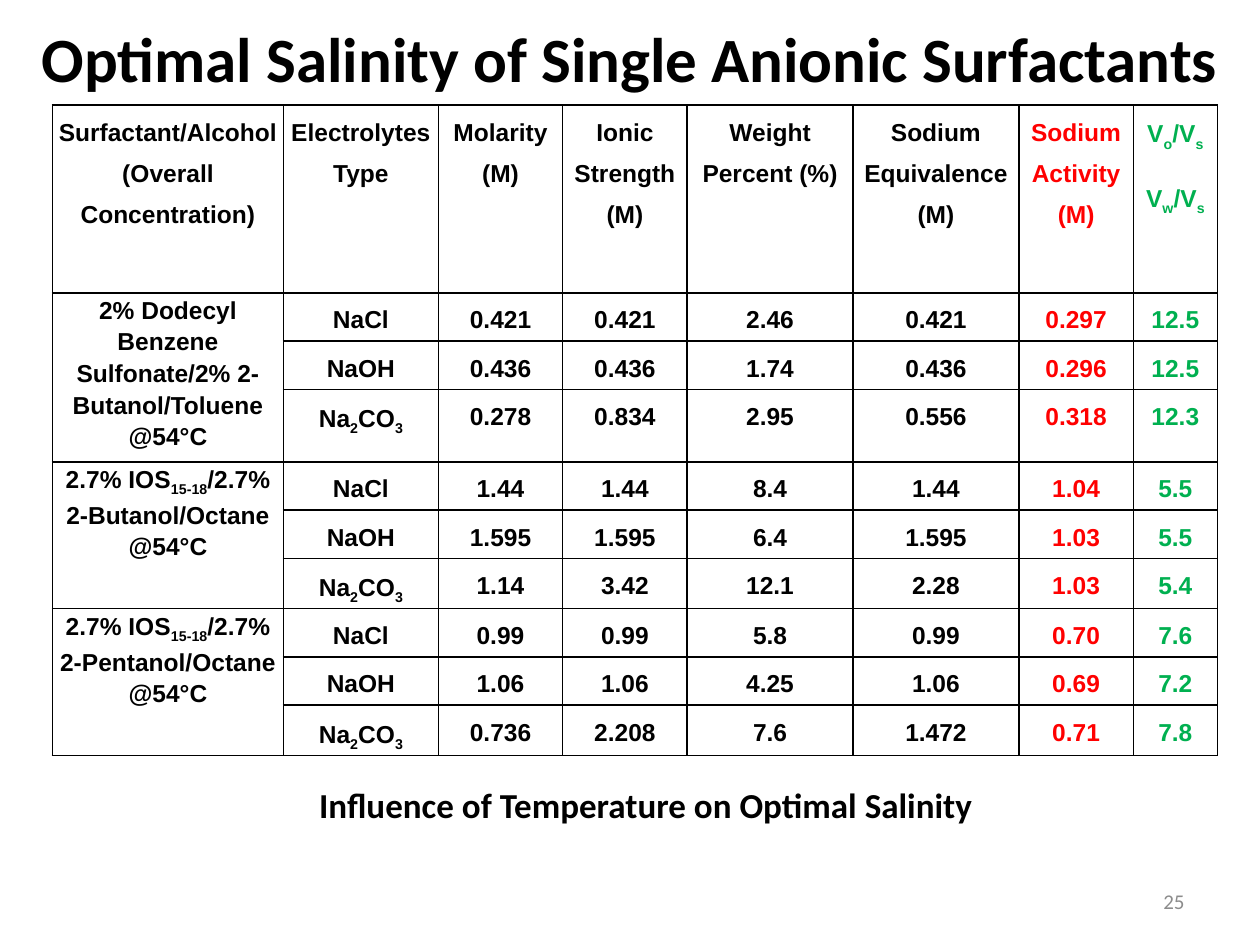
import dataclasses

import pptx
import pptx.dml.color
import pptx.enum.text
import pptx.oxml
import pptx.oxml.ns
import pptx.util

Inches, Pt = pptx.util.Inches, pptx.util.Pt
ALIGN, ANCHOR = pptx.enum.text.PP_ALIGN, pptx.enum.text.MSO_ANCHOR


@dataclasses.dataclass(frozen=True)
class Theme:
    heading_font: str = "Calibri"
    table_font: str = "Arial"
    ink: str = "000000"
    activity: str = "FF0000"
    ratio: str = "00B050"
    muted: str = "8C8C8C"
    title_size: int = 36
    caption_size: int = 20
    table_size: int = 14
    number_size: int = 12
    border_width: int = 1


THEME = Theme()
WIDTH, HEIGHT = 10, 7.5
UNIT = WIDTH / 24  # the page is a grid of 24 columns by 18 rows

COLUMN_SPANS = [4.4, 2.95, 2.37, 2.37, 3.16, 3.16, 2.18, 1.6]
COLUMN_COLORS = [THEME.ink] * 6 + [THEME.activity, THEME.ratio]
HEADER_SPAN, ROW_SPAN = 3.58, 0.92

# Text between tildes is set as a subscript.
HEADERS = [
    "Surfactant/Alcohol (Overall Concentration)", "Electrolytes Type",
    "Molarity (M)", "Ionic Strength (M)", "Weight Percent (%)",
    "Sodium Equivalence (M)", "Sodium Activity (M)",
    "V~o~/V~s~\nV~w~/V~s~",
]
ELECTROLYTES = ["NaCl", "NaOH", "Na~2~CO~3~"]
SYSTEMS = {
    "2% Dodecyl Benzene Sulfonate/2% 2-Butanol/Toluene @54°C": [
        ["0.421", "0.421", "2.46", "0.421", "0.297", "12.5"],
        ["0.436", "0.436", "1.74", "0.436", "0.296", "12.5"],
        ["0.278", "0.834", "2.95", "0.556", "0.318", "12.3"],
    ],
    "2.7% IOS~15-18~/2.7% 2-Butanol/Octane @54°C": [
        ["1.44", "1.44", "8.4", "1.44", "1.04", "5.5"],
        ["1.595", "1.595", "6.4", "1.595", "1.03", "5.5"],
        ["1.14", "3.42", "12.1", "2.28", "1.03", "5.4"],
    ],
    "2.7% IOS~15-18~/2.7% 2-Pentanol/Octane @54°C": [
        ["0.99", "0.99", "5.8", "0.99", "0.70", "7.6"],
        ["1.06", "1.06", "4.25", "1.06", "0.69", "7.2"],
        ["0.736", "2.208", "7.6", "1.472", "0.71", "7.8"],
    ],
}


def grid(*units):
    return [Inches(unit * UNIT) for unit in units]


def style_font(font, name, size, color, bold):
    font.name, font.size, font.bold = name, Pt(size), bold
    font.color.rgb = pptx.dml.color.RGBColor.from_string(color)


def add_text(page, place, text, size, color=THEME.ink, bold=True,
             align=ALIGN.CENTER, anchor=ANCHOR.TOP):
    frame = page.shapes.add_textbox(*grid(*place)).text_frame
    frame.word_wrap = True
    frame.vertical_anchor = anchor
    para = frame.paragraphs[0]
    para.text, para.alignment = text, align
    style_font(para.font, THEME.heading_font, size, color, bold)


def add_spans(para, text):
    """Write text, lowering the parts between tildes."""
    for index, part in enumerate(text.split("~")):
        if part:
            span = para.add_run()
            span.text = part
            if index % 2:
                span.font._element.set("baseline", "-25000")


def add_borders(cell):
    properties = cell._tc.get_or_add_tcPr()
    for position, side in enumerate(("lnL", "lnR", "lnT", "lnB")):
        line = pptx.oxml.parse_xml(
            f'<a:{side} {pptx.oxml.ns.nsdecls("a")} w="{Pt(THEME.border_width)}">'
            f'<a:solidFill><a:srgbClr val="{THEME.ink}"/></a:solidFill></a:{side}>')
        properties.insert(position, line)


def fill_cell(cell, text, color, line_spacing=1.5, space_after=10):
    cell.margin_left = cell.margin_right = Inches(0.04)
    cell.margin_top = cell.margin_bottom = 0
    cell.fill.background()
    add_borders(cell)
    frame = cell.text_frame
    for index, line in enumerate(text.split("\n")):
        para = frame.add_paragraph() if index else frame.paragraphs[0]
        para.alignment = ALIGN.CENTER
        para.line_spacing, para.space_after = line_spacing, Pt(space_after)
        style_font(para.font, THEME.table_font, THEME.table_size, color, True)
        add_spans(para, text=line)


def add_salinity_table(page):
    group = len(ELECTROLYTES)
    heights = [HEADER_SPAN] + [ROW_SPAN] * group * len(SYSTEMS)
    place = grid(1, 2, sum(COLUMN_SPANS), sum(heights))
    table = page.shapes.add_table(len(heights), len(COLUMN_SPANS), *place).table
    table.first_row = table.horz_banding = False
    for column, width in zip(table.columns, grid(*COLUMN_SPANS)):
        column.width = width
    for row, height in zip(table.rows, grid(*heights)):
        row.height = height

    for cell, text, color in zip(table.rows[0].cells, HEADERS, COLUMN_COLORS):
        fill_cell(cell, text, color)
    for system, (name, readings) in enumerate(SYSTEMS.items()):
        top = 1 + system * group
        for offset, (salt, values) in enumerate(zip(ELECTROLYTES, readings)):
            cells = list(table.rows[top + offset].cells)
            fill_cell(cells[0], "" if offset else name, THEME.ink, 1.15, 0)
            for cell, text, color in zip(cells[1:], [salt] + values, COLUMN_COLORS[1:]):
                fill_cell(cell, text, color)
        table.cell(top, 0).merge(table.cell(top + group - 1, 0))


def main():
    deck = pptx.Presentation()
    deck.slide_width, deck.slide_height = Inches(WIDTH), Inches(HEIGHT)
    page = deck.slides.add_slide(deck.slide_layouts[6])
    add_text(page, (0, 0, 24, 2.2), "Optimal Salinity of Single Anionic Surfactants",
             THEME.title_size, anchor=ANCHOR.MIDDLE)
    add_salinity_table(page)
    add_text(page, (5.6, 14.8, 13.4, 1.06),
             "Influence of Temperature on Optimal Salinity", THEME.caption_size)
    add_text(page, (17.2, 16.68, 5.6, 0.96), "25", THEME.number_size, THEME.muted,
             bold=False, align=ALIGN.RIGHT, anchor=ANCHOR.MIDDLE)
    deck.save("out.pptx")


if __name__ == "__main__":
    main()
